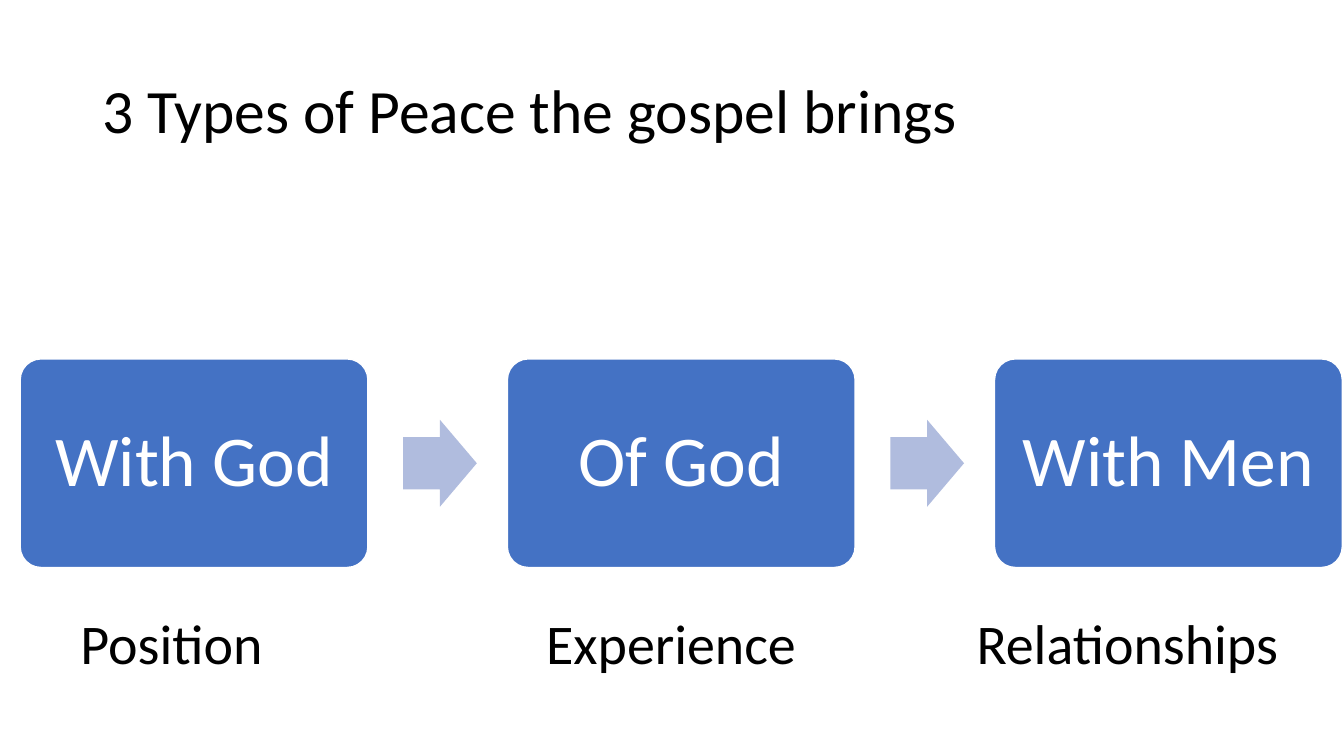
from pptx import Presentation
from pptx.dml.color import RGBColor
from pptx.enum.shapes import MSO_SHAPE
from pptx.enum.text import MSO_ANCHOR, PP_ALIGN
from pptx.util import Pt

COLOURS = {"text": "000000", "box": "4472C4", "arrow": "B0BCDE", "white": "FFFFFF"}
FONT = "Calibri"

# Box text, caption, caption left and caption width
PEACE_TYPES = [
    ("With God", "Position", 50.4, 146.2),
    ("Of God", "Experience", 383, 195.1),
    ("With Men", "Relationships", 690.5, 241.9),
]
BOX_LEFT, BOX_TOP, BOX_WIDTH, BOX_HEIGHT = 14.4, 256.4, 248.4, 149
BOX_PITCH = 348
ARROW_OFFSET, ARROW_WIDTH, ARROW_HEIGHT = 273.6, 52.6, 62
CAPTION_TOP, CAPTION_HEIGHT = 431.3, 55.4


def colour(name):
    return RGBColor.from_string(COLOURS[name])


def write_text(shape, text, size, colour_name, line_spacing=1.0):
    frame = shape.text_frame
    frame.word_wrap = True
    frame.text = text
    paragraph = frame.paragraphs[0]
    paragraph.line_spacing = line_spacing
    font = paragraph.runs[0].font
    font.name = FONT
    font.size = Pt(size)
    font.color.rgb = colour(colour_name)
    return paragraph


def add_label(slide, text, left, top, width, height, size, line_spacing=1.0):
    label = slide.shapes.add_textbox(Pt(left), Pt(top), Pt(width), Pt(height))
    write_text(label, text, size, "text", line_spacing)
    label.text_frame.margin_right = Pt(0)
    return label


def add_filled_shape(slide, kind, left, top, width, height, fill):
    shape = slide.shapes.add_shape(kind, Pt(left), Pt(top), Pt(width), Pt(height))
    shape.shadow.inherit = False
    shape.fill.solid()
    shape.fill.fore_color.rgb = colour(fill)
    return shape


def add_box(slide, text, left):
    box = add_filled_shape(slide, MSO_SHAPE.ROUNDED_RECTANGLE,
                           left, BOX_TOP, BOX_WIDTH, BOX_HEIGHT, "box")
    box.adjustments[0] = 0.1
    box.line.color.rgb = colour("white")
    box.line.width = Pt(1)
    paragraph = write_text(box, text, 51, "white", 0.9)
    paragraph.alignment = PP_ALIGN.CENTER
    box.text_frame.vertical_anchor = MSO_ANCHOR.MIDDLE


def add_arrow(slide, left):
    top = BOX_TOP + (BOX_HEIGHT - ARROW_HEIGHT) / 2
    arrow = add_filled_shape(slide, MSO_SHAPE.RIGHT_ARROW,
                             left, top, ARROW_WIDTH, ARROW_HEIGHT, "arrow")
    arrow.adjustments[0] = 0.6
    arrow.adjustments[1] = 0.5
    arrow.line.fill.background()


def main():
    presentation = Presentation()
    presentation.slide_width = Pt(960)
    presentation.slide_height = Pt(540)
    slide = presentation.slides.add_slide(presentation.slide_layouts[6])

    title = add_label(slide, "3 Types of Peace the gospel brings",
                      66, 28.8, 828, 104.4, 44, 0.9)
    title.text_frame.vertical_anchor = MSO_ANCHOR.MIDDLE

    for index, (text, caption, caption_left, caption_width) in enumerate(PEACE_TYPES):
        left = BOX_LEFT + index * BOX_PITCH
        add_box(slide, text, left)
        if index < len(PEACE_TYPES) - 1:
            add_arrow(slide, left + ARROW_OFFSET)
        add_label(slide, caption, caption_left, CAPTION_TOP,
                  caption_width, CAPTION_HEIGHT, 40)

    presentation.save("out.pptx")


if __name__ == "__main__":
    main()
